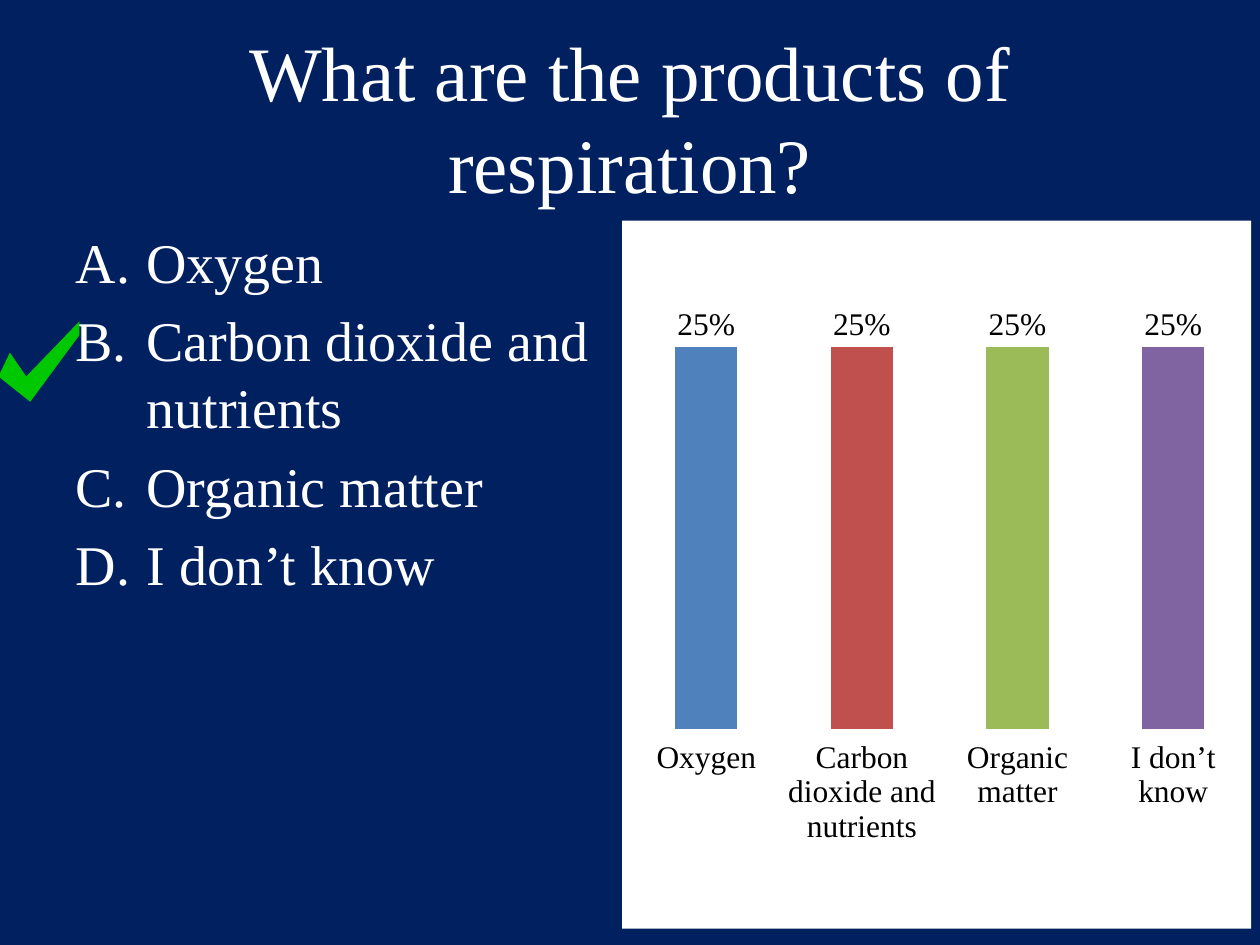
from dataclasses import dataclass

from lxml import etree
from pptx import Presentation
from pptx import util as u
from pptx.chart import data
from pptx.dml import color
from pptx.enum import chart as ch, text
from pptx.oxml import ns, parse_xml


@dataclass(frozen=True)
class Theme:
    """Colours, typeface and type sizes."""
    font: str = "Times New Roman"
    ground: str = "002060"
    light: str = "FFFFFF"
    dark: str = "000000"
    tick: str = "00C800"
    bars: tuple = ("4F81BD", "C0504D", "9BBB59", "8064A2")
    title: int = 44
    body: int = 32
    labels: int = 18


class QuizSlide:
    """Holds the theme and the current slide, and adds each kind of element."""

    def __init__(self, deck, theme):
        """Start a title-and-content slide on a plain ground."""
        self.theme = theme
        self.slide = deck.slides.add_slide(deck.slide_layouts[1])
        self.paint(self.slide.background.fill, theme.ground)

    def paint(self, fill, rgb):
        """Give a fill one solid colour."""
        fill.solid()
        fill.fore_color.rgb = color.RGBColor.from_string(rgb)

    def style(self, font, size, rgb):
        """Set typeface, size and colour of a font."""
        for key, value in {"name": self.theme.font, "size": u.Pt(size)}.items():
            setattr(font, key, value)
        font.color.rgb = color.RGBColor.from_string(rgb)

    def place(self, holder, left, top, width, height):
        """Move a placeholder to a box given in centimetres."""
        box = {"left": left, "top": top, "width": width, "height": height}
        for key, value in box.items():
            setattr(holder, key, u.Cm(value))
        holder.text_frame.word_wrap = True

    def question(self, wording, *box):
        """Fill the title."""
        title = self.slide.shapes.title
        self.place(title, *box)
        frame = title.text_frame
        frame.vertical_anchor = text.MSO_ANCHOR.MIDDLE
        line = frame.paragraphs[0]
        line.alignment = text.PP_ALIGN.CENTER
        run = line.add_run()
        run.text = wording
        self.style(run.font, self.theme.title, self.theme.light)

    def answers(self, choices, *box):
        """Fill the body with a lettered list."""
        body = self.slide.placeholders[1]
        self.place(body, *box)
        frame = body.text_frame
        frame.text = "\n".join(choices)
        hang = u.Cm(1.43)
        for line in frame.paragraphs:
            line.space_before = u.Pt(0.2 * self.theme.body)
            self.style(line.runs[0].font, self.theme.body, self.theme.light)
            props = line._p.get_or_add_pPr()
            for key, value in {"marL": hang, "indent": -hang}.items():
                props.set(key, str(value))
            etree.SubElement(props, ns.qn("a:buAutoNum"), type="alphaUcPeriod")

    def votes(self, choices, shares, *box):
        """Add the column chart of answer shares."""
        poll = data.CategoryChartData(number_format="0%")
        poll.categories = choices
        poll.add_series("Series 1", shares)
        chart = self.slide.shapes.add_chart(
            ch.XL_CHART_TYPE.COLUMN_CLUSTERED, *map(u.Cm, box), poll).chart
        for key, value in {"has_legend": False, "has_title": False}.items():
            setattr(chart, key, value)
        self.style(chart.font, self.theme.labels, self.theme.dark)
        self.chart_axes(chart)
        self.chart_bars(chart.plots[0])
        self.chart_area(chart)

    def chart_axes(self, chart):
        """Hide axis lines, gridlines and value labels."""
        for axis in (chart.category_axis, chart.value_axis):
            axis.has_major_gridlines = False
            axis.format.line.fill.background()
        scale = {"minimum_scale": 0, "maximum_scale": 0.3,
                 "tick_label_position": ch.XL_TICK_LABEL_POSITION.NONE}
        for key, value in scale.items():
            setattr(chart.value_axis, key, value)

    def chart_bars(self, plot):
        """Colour each bar and show its value above it."""
        for key, value in {"gap_width": 150, "vary_by_categories": False,
                           "has_data_labels": True}.items():
            setattr(plot, key, value)
        labels = {"show_value": True, "number_format": "0%",
                  "number_format_is_linked": False,
                  "position": ch.XL_LABEL_POSITION.OUTSIDE_END}
        for key, value in labels.items():
            setattr(plot.data_labels, key, value)
        for index, rgb in enumerate(self.theme.bars):
            self.paint(plot.series[0].points[index].format.fill, rgb)

    def chart_area(self, chart):
        """Give the chart a light ground and a fixed plot area."""
        area = parse_xml(
            f'<c:spPr {ns.nsdecls("c", "a")}><a:solidFill><a:srgbClr val="{self.theme.light}"/>'
            '</a:solidFill><a:ln><a:noFill/></a:ln></c:spPr>')
        root = chart._chartSpace
        root.find(ns.qn("c:chart")).addnext(area)
        plot = root.find(f".//{ns.qn('c:plotArea')}")
        for old in plot.findall(ns.qn("c:layout")):
            plot.remove(old)
        layout = etree.Element(ns.qn("c:layout"))
        manual = etree.SubElement(layout, ns.qn("c:manualLayout"))
        values = {"layoutTarget": "outer", "xMode": "edge", "yMode": "edge",
                  "x": 0.01, "y": 0.07, "w": 0.99, "h": 0.81}
        for key, value in values.items():
            etree.SubElement(manual, ns.qn(f"c:{key}"), val=str(value))
        plot.insert(0, layout)

    def check_mark(self, corners):
        """Draw the mark beside the right answer."""
        start, *others = [(u.Cm(x), u.Cm(y)) for x, y in corners]
        outline = self.slide.shapes.build_freeform(*start)
        outline.add_line_segments(others, close=True)
        mark = outline.convert_to_shape()
        mark.shadow.inherit = False
        self.paint(mark.fill, self.theme.tick)
        mark.line.fill.background()


def main():
    """Build and save the quiz slide."""
    deck = Presentation()
    deck.slide_width, deck.slide_height = u.Cm(25.4), u.Cm(19.05)
    choices = ["Oxygen", "Carbon dioxide and nutrients", "Organic matter", "I don’t know"]
    quiz = QuizSlide(deck, Theme())
    quiz.question("What are the products of respiration?", 1.27, 0.76, 22.86, 3.18)
    quiz.answers(choices, 1.27, 4.45, 11.43, 12.57)
    quiz.votes(choices, [0.25] * len(choices), 12.52, 4.45, 12.7, 14.27)
    quiz.check_mark([(0.2, 7.11), (-0.03, 7.59), (0.61, 8.1),
                     (1.6, 6.76), (1.6, 6.48), (0.53, 7.59)])
    deck.save("out.pptx")


if __name__ == "__main__":
    main()
